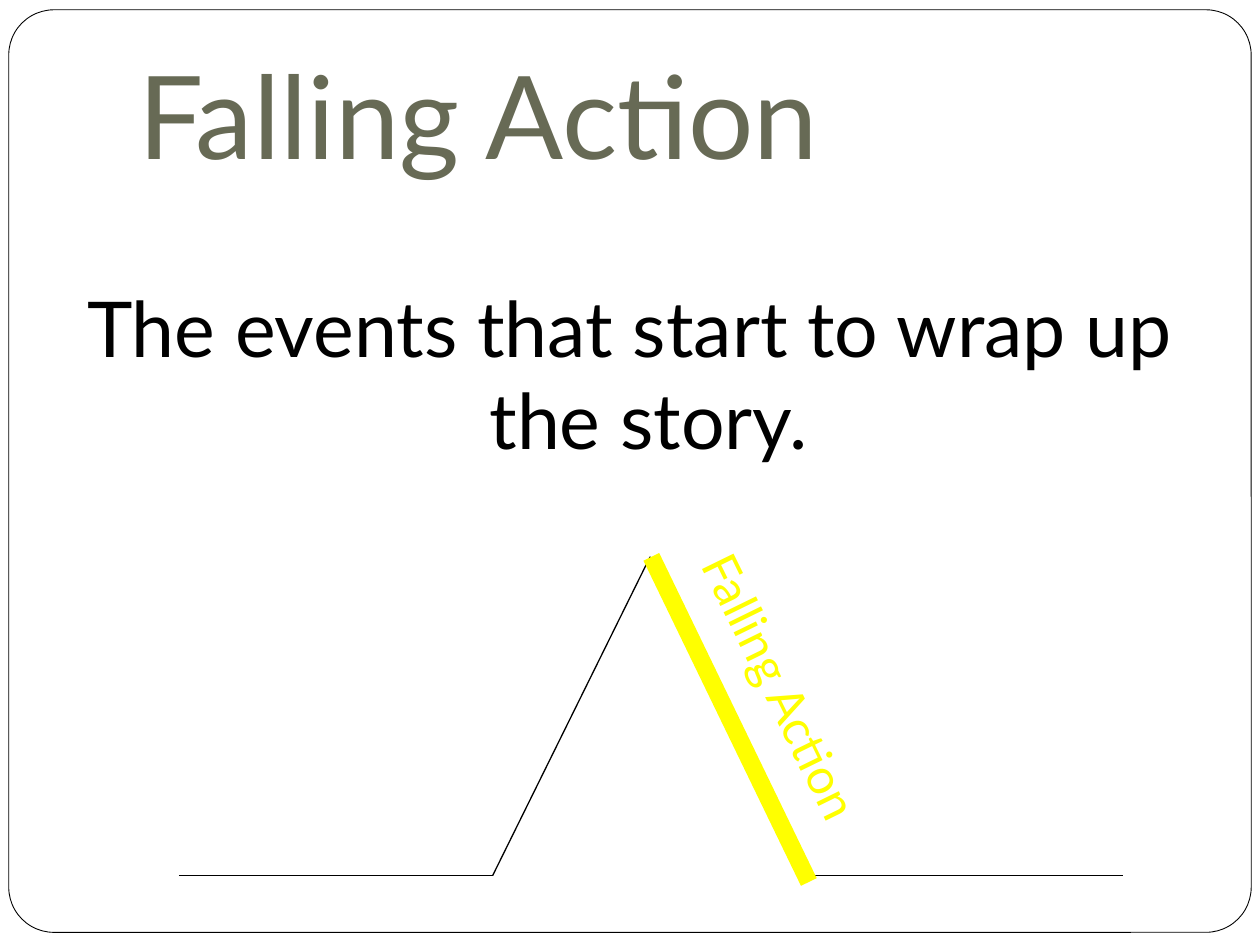
from itertools import pairwise

from lxml.etree import SubElement
from pptx import Presentation
from pptx.dml.color import RGBColor
from pptx.enum.shapes import MSO_CONNECTOR as Connector, MSO_SHAPE as Shape
from pptx.enum.text import MSO_ANCHOR as Anchor, MSO_AUTO_SIZE as AutoSize, PP_ALIGN as Align
from pptx.oxml.ns import qn
from pptx.util import Pt

WHITE = RGBColor(0xFF, 0xFF, 0xFF)
BLACK = RGBColor(0x00, 0x00, 0x00)
OLIVE = RGBColor(0x67, 0x6A, 0x55)
YELLOW = RGBColor(0xFF, 0xFF, 0x00)
FONT = "Lato"

BASELINE, PEAK = 500.4, 318.2
PLOT_POINTS = [(102.2, BASELINE), (281.5, BASELINE), (371.5, PEAK),
               (462.2, BASELINE), (641.5, BASELINE)]


def add_frame(slide):
    """Put the rounded page border behind everything else."""
    frame = slide.shapes.add_shape(
        Shape.ROUNDED_RECTANGLE, Pt(5), Pt(5.6), Pt(710), Pt(527.2))
    frame.adjustments[0] = 0.049
    frame.fill.solid()
    frame.fill.fore_color.rgb = WHITE
    frame.line.color.rgb = BLACK
    frame.line.width = Pt(0.5)
    frame.shadow.inherit = False
    slide.shapes._spTree.insert(2, frame._element)


def place(shape, left, top, width, height):
    shape.left, shape.top = Pt(left), Pt(top)
    shape.width, shape.height = Pt(width), Pt(height)


def write(shape, text, size, color, align, anchor):
    frame = shape.text_frame
    frame.vertical_anchor = anchor
    paragraph = frame.paragraphs[0]
    paragraph.alignment = align
    run = paragraph.add_run()
    run.text = text
    run.font.name = FONT
    run.font.size = Pt(size)
    run.font.color.rgb = color
    return paragraph


def fill_title(title):
    place(title, 72, 21.6, 612, 90)
    title.text_frame.auto_size = AutoSize.NONE
    title.text_frame.margin_bottom = Pt(7.2)
    write(title, "Falling Action", 66, OLIVE, Align.LEFT, Anchor.BOTTOM)


def fill_definition(body):
    place(body, 36, 102.2, 648, 221.8)
    body.text_frame.auto_size = AutoSize.NONE
    paragraph = write(body, "The events that start to wrap up the story.",
                      44, BLACK, Align.CENTER, Anchor.MIDDLE)
    paragraph.space_before = Pt(5.8)
    properties = paragraph._p.get_or_add_pPr()
    properties.set("marL", str(Pt(21.6)))
    properties.set("indent", str(-Pt(21.6)))
    SubElement(properties, qn("a:buNone"))


def add_line(shapes, start, end, color, width):
    line = shapes.add_connector(
        Connector.STRAIGHT, *(Pt(value) for value in (*start, *end)))
    line.line.color.rgb = color
    line.line.width = Pt(width)
    SubElement(line._element.spPr, qn("a:effectLst"))


def add_plot_diagram(slide):
    diagram = slide.shapes.add_group_shape()
    for start, end in pairwise(PLOT_POINTS):
        add_line(diagram.shapes, start, end, BLACK, 0.75)


def add_stage_label(slide):
    label = slide.shapes.add_textbox(Pt(354.2), Pt(376.6), Pt(189.4), Pt(41))
    label.rotation = 63.9
    label.text_frame.word_wrap = False
    label.text_frame.auto_size = AutoSize.SHAPE_TO_FIT_TEXT
    write(label, "Falling Action", 28, YELLOW, Align.LEFT, Anchor.TOP)


def main():
    deck = Presentation()
    deck.slide_width, deck.slide_height = Pt(720), Pt(540)
    slide = deck.slides.add_slide(deck.slide_layouts[1])
    add_frame(slide)
    fill_title(slide.shapes.title)
    fill_definition(slide.placeholders[1])
    add_plot_diagram(slide)
    add_line(slide.shapes, (462.2, 504), (372.2, PEAK), YELLOW, 10)
    add_stage_label(slide)
    deck.save("out.pptx")


if __name__ == "__main__":
    main()
